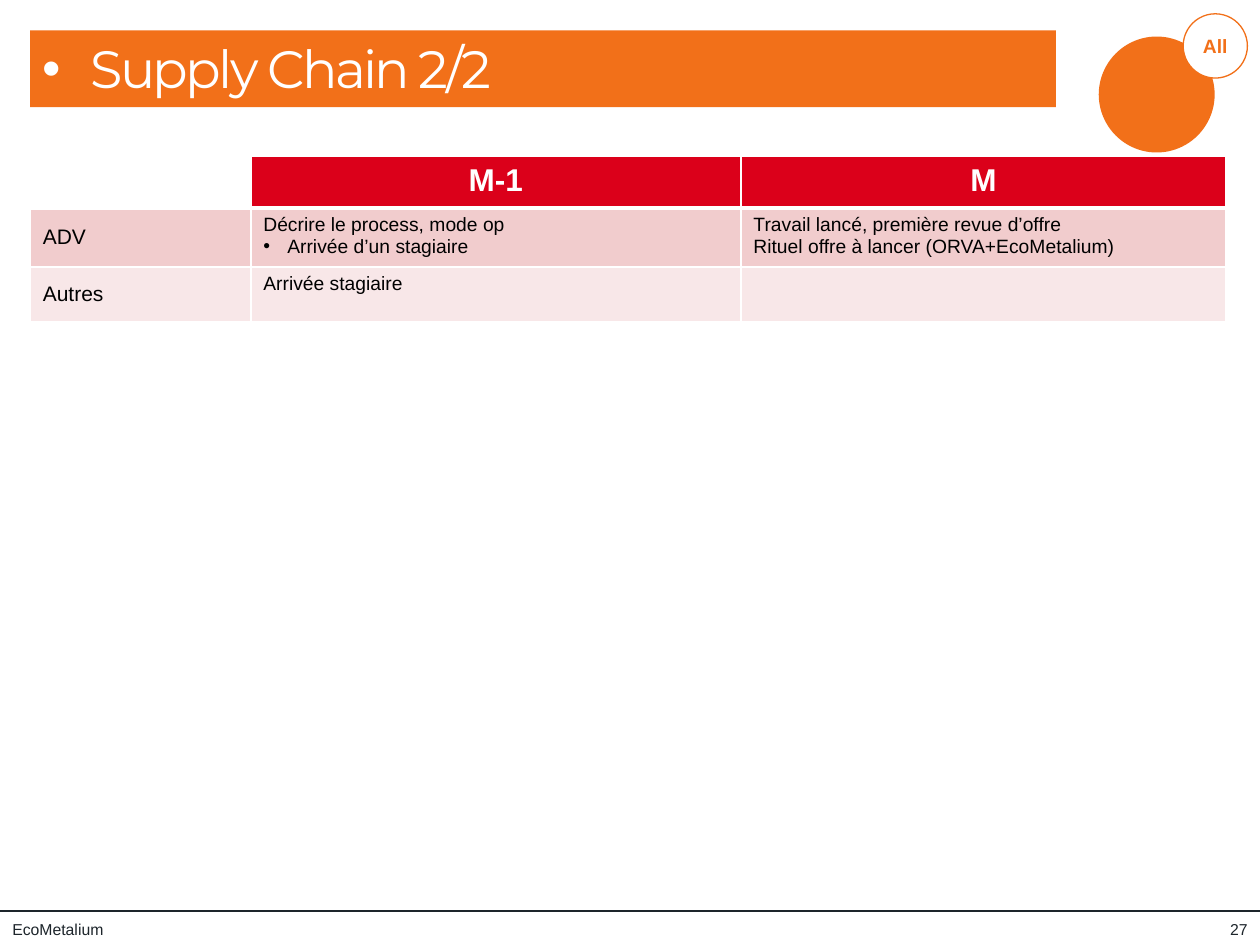
import pptx
import pptx.dml.color
import pptx.enum.shapes
import pptx.enum.text
import pptx.oxml.ns
import pptx.util
from lxml import etree

Inches, Pt = pptx.util.Inches, pptx.util.Pt
RGBColor = pptx.dml.color.RGBColor
Shape = pptx.enum.shapes.MSO_SHAPE
Align = pptx.enum.text.PP_ALIGN
Anchor = pptx.enum.text.MSO_ANCHOR
qn = pptx.oxml.ns.qn

ORANGE = RGBColor(0xF2, 0x70, 0x19)
RED = RGBColor(0xDB, 0x00, 0x1A)
ROSE = RGBColor(0xF1, 0xCC, 0xCD)
PALE_ROSE = RGBColor(0xF8, 0xE7, 0xE8)
INK = RGBColor(0x1D, 0x25, 0x2B)
BLACK = RGBColor(0, 0, 0)
WHITE = RGBColor(0xFF, 0xFF, 0xFF)

TITLE = "Supply Chain 2/2"
BADGE = "All"
COMPANY = "EcoMetalium"
PAGE_NUMBER = "27"

HEADERS = ["", "M-1", "M"]
# label, then one list of (text, bulleted) lines for each month
TOPICS = [
    ("ADV",
     [("Décrire le process, mode op", False), ("Arrivée d’un stagiaire", True)],
     [("Travail lancé, première revue d’offre", False),
      ("Rituel offre à lancer (ORVA+EcoMetalium)", False)]),
    ("Autres", [("Arrivée stagiaire", False)], []),
]
TOPIC_FILLS = [ROSE, PALE_ROSE]
COLUMN_WIDTHS = [1.75, 3.89, 3.85]
ROW_HEIGHTS = [0.41, 0.43, 0.44]


def add_bullet(para, indent):
    props = para._p.get_or_add_pPr()
    props.set("marL", str(Inches(indent)))
    props.set("indent", str(-Inches(indent)))
    etree.SubElement(props, qn("a:buFont")).set("typeface", "Arial")
    etree.SubElement(props, qn("a:buChar")).set("char", "•")


def write(para, text, size, color, font="Arial", bold=False, align=Align.LEFT):
    para.alignment = align
    span = para.add_run()
    span.text = text
    span.font.size = Pt(size)
    span.font.name = font
    span.font.bold = bold
    span.font.color.rgb = color
    return span


def add_filled_shape(page, kind, place, fill, line=None):
    shape = page.shapes.add_shape(kind, *map(Inches, place))
    shape.shadow.inherit = False
    shape.fill.solid()
    shape.fill.fore_color.rgb = fill
    if line is None:
        shape.line.fill.background()
    else:
        shape.line.color.rgb = line
        shape.line.width = Pt(0.75)
    return shape


def add_footer_text(page, text, left, width, align):
    box = page.shapes.add_textbox(Inches(left), Inches(7.25), Inches(width), Inches(0.25))
    box.text_frame.word_wrap = True
    box.text_frame.vertical_anchor = Anchor.MIDDLE
    write(box.text_frame.paragraphs[0], text, 9, INK, align=align)


def style_cell(cell, fill, bottom_width):
    """White borders first, then the fill, as the schema orders them."""
    props = cell._tc.get_or_add_tcPr()
    for side, width in [("L", 1), ("R", 1), ("T", 1), ("B", bottom_width)]:
        border = etree.SubElement(props, qn("a:ln" + side), w=str(Pt(width)))
        paint = etree.SubElement(border, qn("a:solidFill"))
        etree.SubElement(paint, qn("a:srgbClr")).set("val", str(WHITE))
    cell.fill.solid()
    cell.fill.fore_color.rgb = fill


def add_topic_table(page):
    frame = page.shapes.add_table(
        len(ROW_HEIGHTS), len(COLUMN_WIDTHS), Inches(0.24), Inches(1.24),
        Inches(sum(COLUMN_WIDTHS)), Inches(sum(ROW_HEIGHTS)))
    table = frame.table
    for column, width in zip(table.columns, COLUMN_WIDTHS):
        column.width = Inches(width)
    for row, height in zip(table.rows, ROW_HEIGHTS):
        row.height = Inches(height)

    for index, header in enumerate(HEADERS):
        cell = table.cell(0, index)
        style_cell(cell, RED if header else WHITE, 3)
        if header:
            write(cell.text_frame.paragraphs[0], header, 18, WHITE,
                  bold=True, align=Align.CENTER)

    for row, ((label, *months), fill) in enumerate(zip(TOPICS, TOPIC_FILLS), start=1):
        for column in range(len(COLUMN_WIDTHS)):
            style_cell(table.cell(row, column), fill, 1)
        name_cell = table.cell(row, 0)
        name_cell.vertical_anchor = Anchor.MIDDLE
        write(name_cell.text_frame.paragraphs[0], label, 12, BLACK)
        for column, lines in enumerate(months, start=1):
            text_frame = table.cell(row, column).text_frame
            for number, (text, bulleted) in enumerate(lines):
                para = text_frame.add_paragraph() if number else text_frame.paragraphs[0]
                if bulleted:
                    add_bullet(para, 0.19)
                write(para, text, 11, BLACK)


def main():
    deck = pptx.Presentation()
    deck.slide_width, deck.slide_height = Inches(10), Inches(7.5)
    page = deck.slides.add_slide(deck.slide_layouts[6])

    rule = page.shapes.add_connector(
        pptx.enum.shapes.MSO_CONNECTOR.STRAIGHT,
        Inches(0), Inches(7.23), Inches(10), Inches(7.23))
    rule.line.color.rgb = INK
    rule.line.width = Pt(1.5)
    etree.SubElement(rule._element.spPr, qn("a:effectLst"))

    add_filled_shape(page, Shape.OVAL, (8.72, 0.29, 0.92, 0.92), ORANGE)
    badge = add_filled_shape(page, Shape.OVAL, (9.39, 0.11, 0.51, 0.51), WHITE, ORANGE)
    badge.text_frame.margin_left = badge.text_frame.margin_right = 0
    badge.text_frame.vertical_anchor = Anchor.MIDDLE
    write(badge.text_frame.paragraphs[0], BADGE, 11, ORANGE, bold=True, align=Align.CENTER)

    add_footer_text(page, COMPANY, 0, 3.44, Align.LEFT)
    add_footer_text(page, PAGE_NUMBER, 9.51, 0.49, Align.RIGHT)

    banner = add_filled_shape(page, Shape.RECTANGLE, (0.24, 0.24, 8.14, 0.61), ORANGE)
    banner.text_frame.vertical_anchor = Anchor.TOP
    title = banner.text_frame.paragraphs[0]
    add_bullet(title, 0.38)
    span = write(title, TITLE, 30, WHITE, font="Montserrat")
    span.font._element.set("spc", "-150")

    add_topic_table(page)
    deck.save("out.pptx")


if __name__ == "__main__":
    main()
